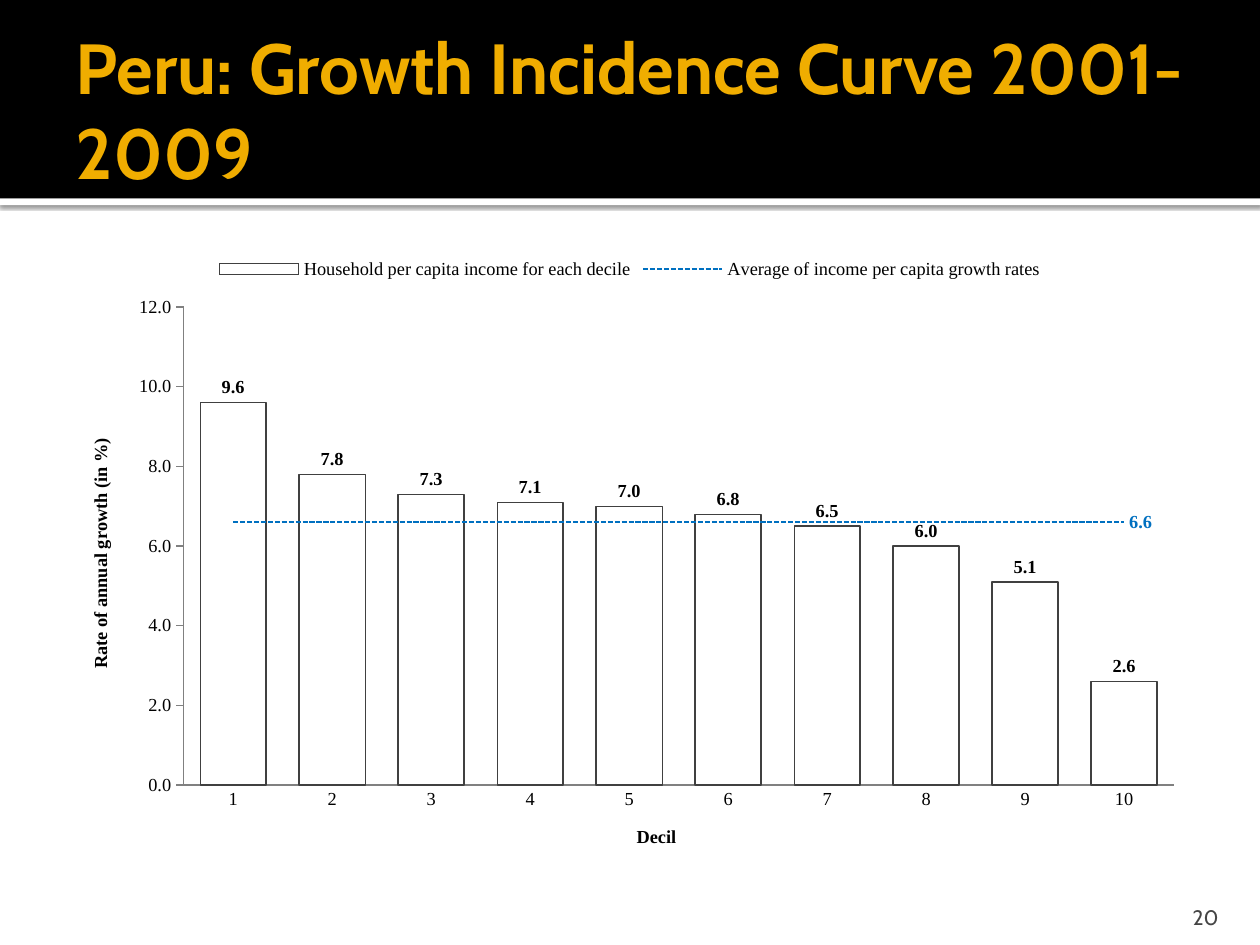
from dataclasses import dataclass
from typing import Optional

from pptx import Presentation
from pptx import util as u
from pptx.chart.data import CategoryChartData
from pptx.dml.color import RGBColor
from pptx.enum import chart as ch, dml, shapes, text
from pptx.oxml import parse_xml
from pptx.oxml.ns import nsdecls, qn

WIDTH, HEIGHT = 10, 7.5
COLORS = {"band": "000000", "paper": "FFFFFF", "title": "F0AD00", "number": "454545",
          "ink": "000000", "bar_edge": "404040", "average": "0070C0", "axis": "808080"}
HEAD_FONT, CHART_FONT = "Cabin", "Times New Roman"
BAND_SHARE = 0.21
INCOME_GROWTH = (9.6, 7.8, 7.3, 7.1, 7.0, 6.8, 6.5, 6.0, 5.1, 2.6)
AVERAGE_GROWTH = 6.6
NUMBER_FORMAT = "#,##0.0"


@dataclass
class Area:
    """A rectangle given as shares of the slide."""
    left: float
    top: float
    width: float
    height: float

    def lengths(self) -> tuple:
        return (u.Inches(self.left * WIDTH), u.Inches(self.top * HEIGHT),
                u.Inches(self.width * WIDTH), u.Inches(self.height * HEIGHT))


@dataclass
class Band:
    area: Area
    color: str
    shadow: bool = False


BANDS = (Band(Area(0, BAND_SHARE, 1, 0.007), "paper", shadow=True),
         Band(Area(0, 0, 1, BAND_SHARE), "band"))
TITLE_AREA = Area(0.05, 0.023, 0.9, 0.183)
NUMBER_AREA = Area(0.897, 0.944, 0.08, 0.04)
CHART_AREA = Area(0.05, 0.259, 0.9, 0.675)
PLOT_IN_CHART = {"x": 0.106, "y": 0.097, "w": 0.874, "h": 0.751}


def rgb(name: str) -> RGBColor:
    return RGBColor.from_string(COLORS[name])


def apply(target, formats: dict) -> None:
    for name, value in formats.items():
        setattr(target, name, value)


def style_font(font, color: str, size: float, family: str, bold: bool = False) -> None:
    apply(font, {"size": u.Pt(size), "name": family, "bold": bold})
    font.color.rgb = rgb(color)


def style_line(line, color: str, width: float, dash: Optional[dml.MSO_LINE] = None) -> None:
    line.color.rgb = rgb(color)
    line.width = u.Pt(width)
    if dash is not None:
        line.dash_style = dash


def draw_band(page, band: Band) -> None:
    box = page.shapes.add_shape(shapes.MSO_SHAPE.RECTANGLE, *band.area.lengths())
    box.fill.solid()
    box.fill.fore_color.rgb = rgb(band.color)
    box.line.fill.background()
    box.shadow.inherit = False
    if band.shadow:
        effects = box.element.spPr.find(qn("a:effectLst"))
        effects.append(parse_xml(
            f'<a:outerShdw {nsdecls("a")} blurRad="{u.Pt(2.5)}" dist="{u.Pt(0.8)}" '
            'dir="5400000" algn="tl" rotWithShape="0"><a:srgbClr val="000000">'
            '<a:alpha val="60000"/></a:srgbClr></a:outerShdw>'))


def write_text(box, words: str, area: Area, frame_formats: dict, align, **font) -> None:
    apply(box, dict(zip(("left", "top", "width", "height"), area.lengths())))
    frame = box.text_frame
    apply(frame, {"word_wrap": True, "auto_size": text.MSO_AUTO_SIZE.NONE,
                  "margin_left": u.Inches(0.1), "margin_top": u.Inches(0.05),
                  **frame_formats})
    para = frame.paragraphs[0]
    para.alignment = align
    span = para.add_run()
    span.text = words
    style_font(span.font, family=HEAD_FONT, **font)


def move_last_series_to_line_plot(chart) -> None:
    """Turn the last bar series into a line on the same axes."""
    bars = chart.element.find(".//" + qn("c:barChart"))
    series = bars.findall(qn("c:ser"))[-1]
    for bar_only in series.findall(qn("c:invertIfNegative")):
        series.remove(bar_only)
    line_plot = parse_xml(f'<c:lineChart {nsdecls("c")}><c:grouping val="standard"/>'
                          '<c:varyColors val="0"/><c:marker val="1"/></c:lineChart>')
    line_plot.insert(2, series)
    for axis_id in bars.findall(qn("c:axId")):
        line_plot.append(parse_xml(
            f'<c:axId {nsdecls("c")} val="{axis_id.get("val")}"/>'))
    bars.addnext(line_plot)


def place_plot(chart) -> None:
    plot_area = chart.element.find(".//" + qn("c:plotArea"))
    for old in plot_area.findall(qn("c:layout")):
        plot_area.remove(old)
    modes = "".join(f'<c:{side}Mode val="edge"/>' for side in "xy")
    shares = "".join(f'<c:{key} val="{share}"/>' for key, share in PLOT_IN_CHART.items())
    plot_area.insert(0, parse_xml(
        f'<c:layout {nsdecls("c")}><c:manualLayout><c:layoutTarget val="inner"/>'
        f'{modes}{shares}</c:manualLayout></c:layout>'))


def paint_chart_background(chart) -> None:
    fill = f'<a:solidFill><a:srgbClr val="{COLORS["paper"]}"/></a:solidFill>'
    chart.element.find(qn("c:txPr")).addprevious(parse_xml(
        f'<c:spPr {nsdecls("c", "a")}>{fill}<a:ln w="{u.Pt(0.75)}">{fill}</a:ln></c:spPr>'))


def style_axis(axis, title: str, tick, formats: dict) -> None:
    apply(axis, {"has_major_gridlines": False, "major_tick_mark": tick,
                 "minor_tick_mark": ch.XL_TICK_MARK.NONE, **formats})
    style_line(axis.format.line, "axis", 0.75)
    para = axis.axis_title.text_frame.paragraphs[0]
    span = para.add_run()
    span.text = title
    style_font(span.font, "ink", 10.5, CHART_FONT, bold=True)


def style_bars(plot) -> None:
    apply(plot, {"gap_width": 50, "vary_by_categories": False})
    bars = plot.series[0]
    bars.format.fill.solid()
    bars.format.fill.fore_color.rgb = rgb("paper")
    style_line(bars.format.line, "bar_edge", 0.75)
    labels = bars.data_labels
    apply(labels, {"show_value": True, "number_format": NUMBER_FORMAT,
                   "number_format_is_linked": False,
                   "position": ch.XL_LABEL_POSITION.OUTSIDE_END})
    style_font(labels.font, "ink", 10.5, CHART_FONT, bold=True)


def style_average(plot) -> None:
    average = plot.series[0]
    average.smooth = False
    average.marker.style = ch.XL_MARKER_STYLE.NONE
    style_line(average.format.line, "average", 1, dml.MSO_LINE.SQUARE_DOT)
    label = average.points[len(INCOME_GROWTH) - 1].data_label
    style_font(label.font, "average", 10.5, CHART_FONT, bold=True)
    label.position = ch.XL_LABEL_POSITION.RIGHT
    average.data_labels.show_value = False


def draw_growth_chart(page) -> None:
    data = CategoryChartData(number_format=NUMBER_FORMAT)
    data.categories = range(1, len(INCOME_GROWTH) + 1)
    data.add_series("Household per capita income for each decile", INCOME_GROWTH)
    data.add_series("Average of income per capita growth rates",
                    [AVERAGE_GROWTH] * len(INCOME_GROWTH))
    chart = page.shapes.add_chart(ch.XL_CHART_TYPE.COLUMN_CLUSTERED,
                                  *CHART_AREA.lengths(), data).chart
    style_font(chart.font, "ink", 10.5, CHART_FONT)
    apply(chart, {"has_title": False, "has_legend": True})
    apply(chart.legend, {"position": ch.XL_LEGEND_POSITION.TOP, "include_in_layout": False})
    style_axis(chart.category_axis, "Decil", ch.XL_TICK_MARK.NONE, {})
    style_axis(chart.value_axis, "Rate of annual growth (in %)", ch.XL_TICK_MARK.OUTSIDE,
               {"minimum_scale": 0, "maximum_scale": 12, "major_unit": 2})
    apply(chart.value_axis.tick_labels,
          {"number_format": NUMBER_FORMAT, "number_format_is_linked": False})
    move_last_series_to_line_plot(chart)
    bar_plot, line_plot = chart.plots
    style_bars(bar_plot)
    style_average(line_plot)
    place_plot(chart)
    paint_chart_background(chart)


def main() -> None:
    deck = Presentation()
    deck.slide_width, deck.slide_height = u.Inches(WIDTH), u.Inches(HEIGHT)
    page = deck.slides.add_slide(deck.slide_layouts[5])
    for band in BANDS:
        draw_band(page, band)
    title = page.shapes.title
    title.element.getparent().append(title.element)  # in front of the bands
    write_text(title, "Peru: Growth Incidence Curve 2001-2009", TITLE_AREA,
               {"vertical_anchor": text.MSO_ANCHOR.MIDDLE, "margin_right": u.Inches(0.05)},
               text.PP_ALIGN.LEFT, color="title", size=40.5, bold=True)
    number = page.shapes.add_textbox(*NUMBER_AREA.lengths())
    write_text(number, "20", NUMBER_AREA,
               {"vertical_anchor": text.MSO_ANCHOR.BOTTOM, "margin_bottom": 0},
               text.PP_ALIGN.RIGHT, color="number", size=12)
    draw_growth_chart(page)
    deck.save("out.pptx")


if __name__ == "__main__":
    main()
